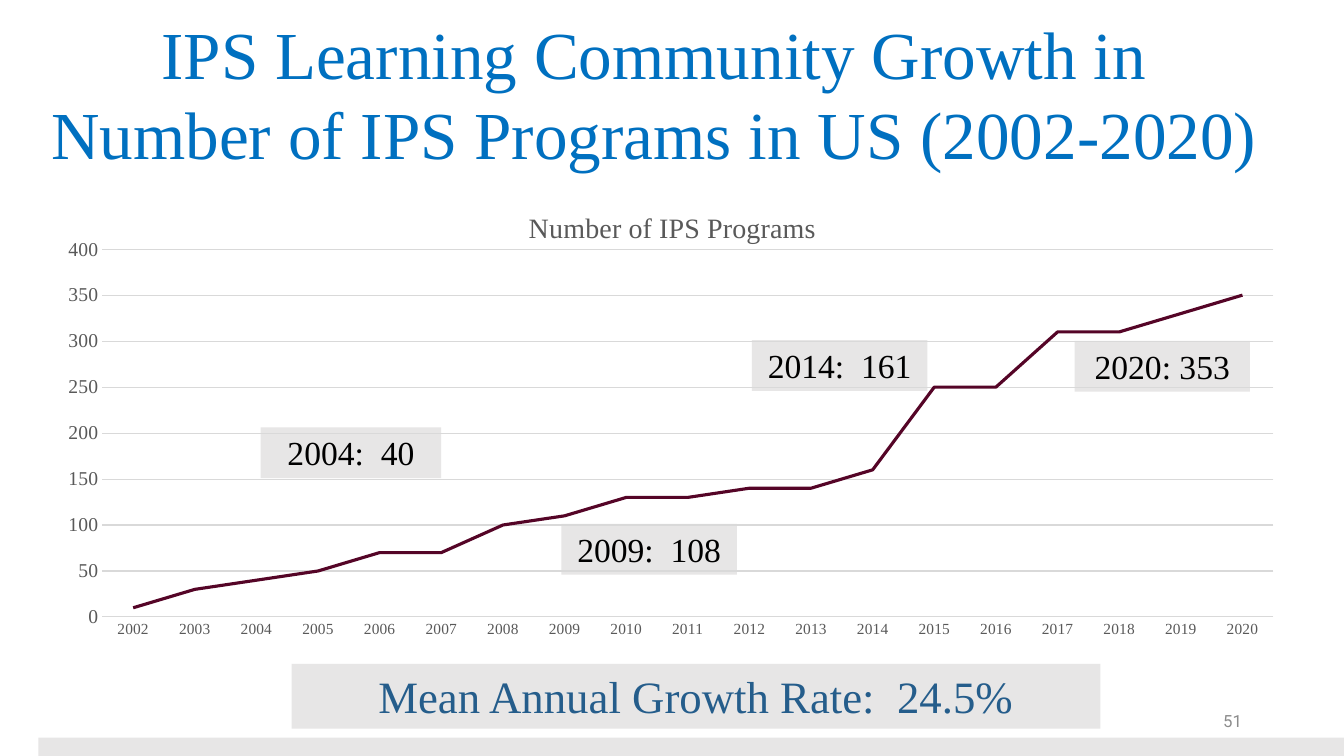
from dataclasses import dataclass

from lxml import etree
from pptx import Presentation
from pptx import util as u
from pptx.chart.data import CategoryChartData
from pptx.dml.color import RGBColor
from pptx.enum import chart as charts, shapes, text
from pptx.oxml import ns


@dataclass(frozen=True)
class Theme:
    serif: str = "Times New Roman"
    sans: str = "Roboto"
    title: str = "0070C0"
    rate: str = "255D8B"
    ink: str = "000000"
    panel: str = "E7E6E6"
    number: str = "8C8C8C"
    axis: str = "595959"
    grid: str = "D9D9D9"
    series: str = "550527"
    title_size: int = 48
    rate_size: int = 32
    callout_size: int = 24
    chart_title_size: int = 20
    value_size: int = 14
    number_size: int = 12
    category_size: int = 11
    chart_size: int = 10


@dataclass(frozen=True)
class Box:
    left: float
    top: float
    width: float
    height: float

    def lengths(self) -> tuple:
        return tuple(u.Cm(n) for n in (self.left, self.top, self.width, self.height))


@dataclass(frozen=True)
class Panel:
    box: Box
    wording: str = ""
    size: int = Theme.callout_size
    color: str = Theme.ink


THEME = Theme()
SERIES_NAME = "Number of IPS Programs"
FIRST_YEAR = 2002
PROGRAMS = (10, 30, 40, 50, 70, 70, 100, 110, 130, 130,
            140, 140, 160, 250, 250, 310, 310, 330, 350)
CHART = Box(1.3, 4.8, 31.29, 11.71)
PLOT = Box(1.28, 1.48, 29.51, 9.27)  # measured from the chart's corner
PANELS = (
    Panel(Box(0.97, 18.59, 32.92, 1.45)),
    Panel(Box(7.35, 16.73, 20.38, 1.63), "Mean Annual Growth Rate:  24.5%",
          THEME.rate_size, THEME.rate),
    Panel(Box(6.57, 10.77, 4.55, 1.28), "2004:  40"),
    Panel(Box(14.15, 13.2, 4.42, 1.28), "2009:  108"),
    Panel(Box(27.08, 8.59, 4.42, 1.28), "2020: 353"),
    Panel(Box(18.95, 8.57, 4.42, 1.28), "2014:  161"),
)


def style_font(font, size: int, color: str, name: str = THEME.serif) -> None:
    font.size = u.Pt(size)
    font.name = name
    font.bold = False
    font.color.rgb = RGBColor.from_string(color)


def style_line(line, color: str, width: float) -> None:
    line.color.rgb = RGBColor.from_string(color)
    line.width = u.Pt(width)


def add_text(slide, box: Box, lines: tuple, size: int, color: str, name: str, align):
    frame = slide.shapes.add_textbox(*box.lengths()).text_frame
    frame.word_wrap = True
    frame.text = "\n".join(lines)
    for paragraph in frame.paragraphs:
        paragraph.alignment = align
        style_font(paragraph.font, size, color, name)
    return frame


def add_panel(slide, panel: Panel) -> None:
    shape = slide.shapes.add_shape(shapes.MSO_SHAPE.RECTANGLE, *panel.box.lengths())
    shape.shadow.inherit = False
    shape.fill.solid()
    shape.fill.fore_color.rgb = RGBColor.from_string(THEME.panel)
    shape.line.fill.background()
    if panel.wording:
        frame = shape.text_frame
        frame.word_wrap = True
        frame.vertical_anchor = text.MSO_ANCHOR.TOP
        paragraph = frame.paragraphs[0]
        paragraph.text = panel.wording
        paragraph.alignment = text.PP_ALIGN.CENTER
        style_font(paragraph.font, panel.size, panel.color)


def place_plot(chart, outer: Box, inner: Box) -> None:
    """Fix the inner plot area as fractions of the chart."""
    plot_area = chart.plots[0]._element.getparent()
    for old in plot_area.findall(ns.qn("c:layout")):
        plot_area.remove(old)
    layout = etree.Element(ns.qn("c:layout"))
    manual = etree.SubElement(layout, ns.qn("c:manualLayout"))
    settings = {"layoutTarget": "inner", "xMode": "edge", "yMode": "edge",
                "x": inner.left / outer.width, "y": inner.top / outer.height,
                "w": inner.width / outer.width, "h": inner.height / outer.height}
    for tag, value in settings.items():
        etree.SubElement(manual, ns.qn(f"c:{tag}")).set("val", str(value))
    plot_area.insert(0, layout)


def add_growth_chart(slide) -> None:
    data = CategoryChartData()
    data.categories = [str(FIRST_YEAR + n) for n in range(len(PROGRAMS))]
    data.add_series(SERIES_NAME, PROGRAMS)
    chart = slide.shapes.add_chart(
        charts.XL_CHART_TYPE.LINE, *CHART.lengths(), data).chart
    style_font(chart.font, THEME.chart_size, THEME.ink)
    chart.has_legend = False

    # Chart title
    chart.has_title = True
    chart.chart_title.include_in_layout = False
    paragraph = chart.chart_title.text_frame.paragraphs[0]
    paragraph.text = SERIES_NAME
    style_font(paragraph.font, THEME.chart_title_size, THEME.axis)

    # Axes
    axes = ((chart.category_axis, THEME.category_size),
            (chart.value_axis, THEME.value_size))
    for axis, size in axes:
        axis.major_tick_mark = axis.minor_tick_mark = charts.XL_TICK_MARK.NONE
        style_font(axis.tick_labels.font, size, THEME.axis)
    style_line(chart.category_axis.format.line, THEME.grid, 0.75)
    values = chart.value_axis
    values.minimum_scale, values.maximum_scale, values.major_unit = 0, 400, 50
    values.format.line.fill.background()
    values.has_major_gridlines = True
    style_line(values.major_gridlines.format.line, THEME.grid, 0.75)

    # Growth line
    plot = chart.plots[0]
    plot.vary_by_categories = False
    series = plot.series[0]
    series.smooth = False
    series.marker.style = charts.XL_MARKER_STYLE.NONE
    style_line(series.format.line, THEME.series, 2.25)
    place_plot(chart, CHART, PLOT)


def main() -> None:
    presentation = Presentation()
    presentation.slide_width = u.Cm(33.87)
    presentation.slide_height = u.Cm(19.05)
    slide = presentation.slides.add_slide(presentation.slide_layouts[6])

    # Slide number
    number = add_text(slide, Box(23.93, 17.65, 7.62, 1.02), ("51",),
                      THEME.number_size, THEME.number, THEME.sans,
                      text.PP_ALIGN.RIGHT)
    number.vertical_anchor = text.MSO_ANCHOR.MIDDLE

    # Title, set slightly left of centre
    title = add_text(slide, Box(0, 0.18, 33.4, 4.37),
                     ("IPS Learning Community Growth in",
                      "Number of IPS Programs in US (2002-2020)"),
                     THEME.title_size, THEME.title, THEME.serif,
                     text.PP_ALIGN.CENTER)
    title.margin_right = u.Cm(0.68)

    # Bottom bar, growth rate and callouts
    for panel in PANELS:
        add_panel(slide, panel)

    # Chart lies over the callouts
    add_growth_chart(slide)
    presentation.save("out.pptx")


if __name__ == "__main__":
    main()
